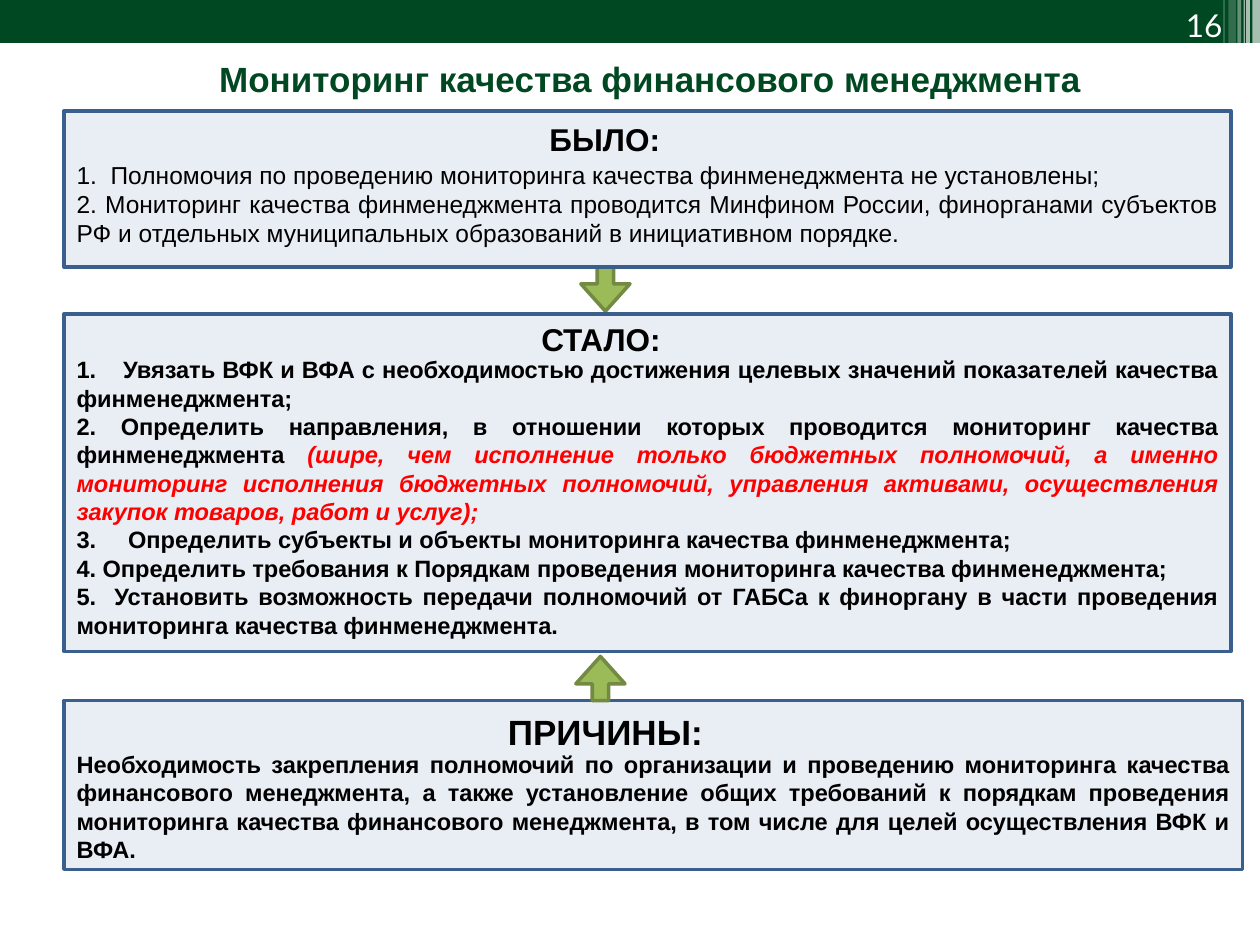
from lxml import etree
from pptx import Presentation
from pptx.dml.color import RGBColor
from pptx.enum.shapes import MSO_SHAPE
from pptx.enum.text import MSO_ANCHOR, MSO_AUTO_SIZE, PP_ALIGN
from pptx.oxml.ns import qn
from pptx.util import Inches, Pt

RECT, DOWN, UP = MSO_SHAPE.RECTANGLE, MSO_SHAPE.DOWN_ARROW, MSO_SHAPE.UP_ARROW
TOP, MIDDLE, BOTTOM = MSO_ANCHOR.TOP, MSO_ANCHOR.MIDDLE, MSO_ANCHOR.BOTTOM
CENTER, RIGHT, JUSTIFY = PP_ALIGN.CENTER, PP_ALIGN.RIGHT, PP_ALIGN.JUSTIFY
NO_FIT = MSO_AUTO_SIZE.NONE
TITLE_ONLY = 5
COLUMNS, ROWS = 100, 75
GREEN, WHITE, BLACK, RED = "004821", "FFFFFF", "000000", "FF0000"
PANEL, PANEL_EDGE = "E9EDF4", "3A5F8C"
ARROW, ARROW_EDGE = "9BBB59", "738A42"


def rgb(code):
    return RGBColor.from_string(code)


class MonitoringSlide:
    font = "Arial"
    leading = 1.2

    def __init__(self, deck):
        self.slide = deck.slides.add_slide(deck.slide_layouts[TITLE_ONLY])
        self.shapes = self.slide.shapes
        self.column = deck.slide_width / COLUMNS
        self.row = deck.slide_height / ROWS

    def place(self, left, top, width, height):
        """Turn grid columns and rows into lengths."""
        return (round(left * self.column), round(top * self.row),
                round(width * self.column), round(height * self.row))

    def add_runs(self, paragraph, runs, size, align, bold=False, font=None):
        """Add (text, colour, italic) runs to a paragraph."""
        paragraph.alignment = align
        paragraph.line_spacing = Pt(size * self.leading)
        for text, color, italic in runs:
            run = paragraph.add_run()
            run.text = text
            run.font.name = font or self.font
            run.font.size = Pt(size)
            run.font.bold = bold
            run.font.italic = italic
            run.font.color.rgb = rgb(color)

    def shape(self, kind, box, fill, edge=None, opacity=None):
        shape = self.shapes.add_shape(kind, *self.place(*box))
        shape.shadow.inherit = False
        shape.fill.solid()
        shape.fill.fore_color.rgb = rgb(fill)
        if opacity:
            color = shape.element.spPr.find(qn("a:solidFill"))[0]
            etree.SubElement(color, qn("a:alpha"), val=str(opacity * 1000))
        if edge:
            shape.line.color.rgb = rgb(edge)
            shape.line.width = Pt(2)
        else:
            shape.line.fill.background()
        return shape

    def title(self, text, box, size):
        title = self.shapes.title
        title.left, title.top, title.width, title.height = self.place(*box)
        frame = title.text_frame
        frame.auto_size = NO_FIT
        frame.vertical_anchor = TOP
        self.add_runs(frame.paragraphs[0], [(text, GREEN, False)], size, CENTER, True)

    def label(self, text, box, size, align=CENTER, color=BLACK, bold=True, font=None):
        frame = self.shapes.add_textbox(*self.place(*box)).text_frame
        frame.word_wrap = True
        self.add_runs(frame.paragraphs[0], [(text, color, False)], size, align, bold, font)

    def panel(self, box, items, size, bold=True, anchor=MIDDLE):
        """Framed text of (runs, tab stop in inches) items, one line kept free on top."""
        frame = self.shape(RECT, box, PANEL, PANEL_EDGE).text_frame
        frame.word_wrap = True
        frame.vertical_anchor = anchor
        frame.margin_top = Inches(0.05) + Pt(size * self.leading)
        for index, (runs, stop) in enumerate(items):
            paragraph = frame.add_paragraph() if index else frame.paragraphs[0]
            if stop:
                tabs = etree.SubElement(paragraph._p.get_or_add_pPr(), qn("a:tabLst"))
                etree.SubElement(tabs, qn("a:tab"), pos=str(Inches(stop)), algn="l")
            self.add_runs(paragraph, runs, size, JUSTIFY, bold)

    def arrow(self, kind, left, top):
        arrow = self.shape(kind, (left, top, 3.9, 3.5), ARROW, ARROW_EDGE)
        arrow.adjustments[0] = 0.33
        arrow.adjustments[1] = 0.62


def plain(text, stop=None):
    """A one-run black item."""
    return [(text, BLACK, False)], stop


STRIPES = [  # left, width, height, opacity
    (99.4, 0.6, 3.4, 65), (98.9, 0.3, 3.4, 65), (98.7, 0.1, 3.4, 60),
    (98.2, 0.3, 3.4, 40), (97.5, 0.6, 3.6, 20), (97.1, 0.1, 3.6, 30),
]
BEFORE = [
    plain("1.\tПолномочия по проведению мониторинга качества финменеджмента "
          "не установлены;", 0.27),
    plain("2. Мониторинг качества финменеджмента проводится Минфином России, "
          "финорганами субъектов РФ и отдельных муниципальных образований "
          "в инициативном порядке."),
]
AFTER = [
    plain("1.\tУвязать ВФК и ВФА с необходимостью достижения целевых значений "
          "показателей качества финменеджмента;", 0.37),
    ([("2. Определить направления, в отношении которых проводится мониторинг "
       "качества финменеджмента ", BLACK, False),
      ("(шире, чем исполнение только бюджетных полномочий, а именно мониторинг "
       "исполнения бюджетных полномочий, управления активами, осуществления "
       "закупок товаров, работ и услуг);", RED, True)], None),
    plain("3.\tОпределить субъекты и объекты мониторинга качества "
          "финменеджмента;", 0.41),
    plain("4. Определить требования к Порядкам проведения мониторинга качества "
          "финменеджмента;"),
    plain("5.\tУстановить возможность передачи полномочий от ГАБСа к финоргану "
          "в части проведения мониторинга качества финменеджмента.", 0.3),
]
REASONS = [
    plain("Необходимость закрепления полномочий по организации и проведению "
          "мониторинга качества финансового менеджмента, а также установление "
          "общих требований к порядкам проведения мониторинга качества "
          "финансового менеджмента, в том числе для целей осуществления ВФК и ВФА."),
]


def main():
    deck = Presentation()
    deck.slide_width, deck.slide_height = Inches(10), Inches(7.5)
    page = MonitoringSlide(deck)

    page.shape(RECT, (0, 0, 100, 3.4), GREEN)
    for left, width, height, opacity in STRIPES:
        page.shape(RECT, (left, 0, width, height), WHITE, opacity=opacity)
    page.label("16", (89, 0, 9, 3.7), 18, RIGHT, WHITE, False, "Lato")
    page.title("Мониторинг качества финансового менеджмента", (1.6, 4.1, 100, 4.4), 20)

    page.arrow(DOWN, 46.1, 21.2)
    page.panel((5.1, 55.6, 93.5, 13.4), REASONS, 13.5, anchor=BOTTOM)
    page.label("ПРИЧИНЫ:", (32.8, 55.9, 30.5, 4.4), 20)
    page.panel((5.1, 24.9, 92.6, 26.8), AFTER, 13.5)
    page.label("СТАЛО:", (24.8, 24.9, 45.8, 4), 18)
    page.panel((5.1, 8.8, 92.6, 12.4), BEFORE, 14, bold=False)
    page.label("БЫЛО:", (22.2, 9, 51.6, 4), 18)
    page.arrow(UP, 45.7, 52.1)

    deck.save("out.pptx")


if __name__ == "__main__":
    main()
